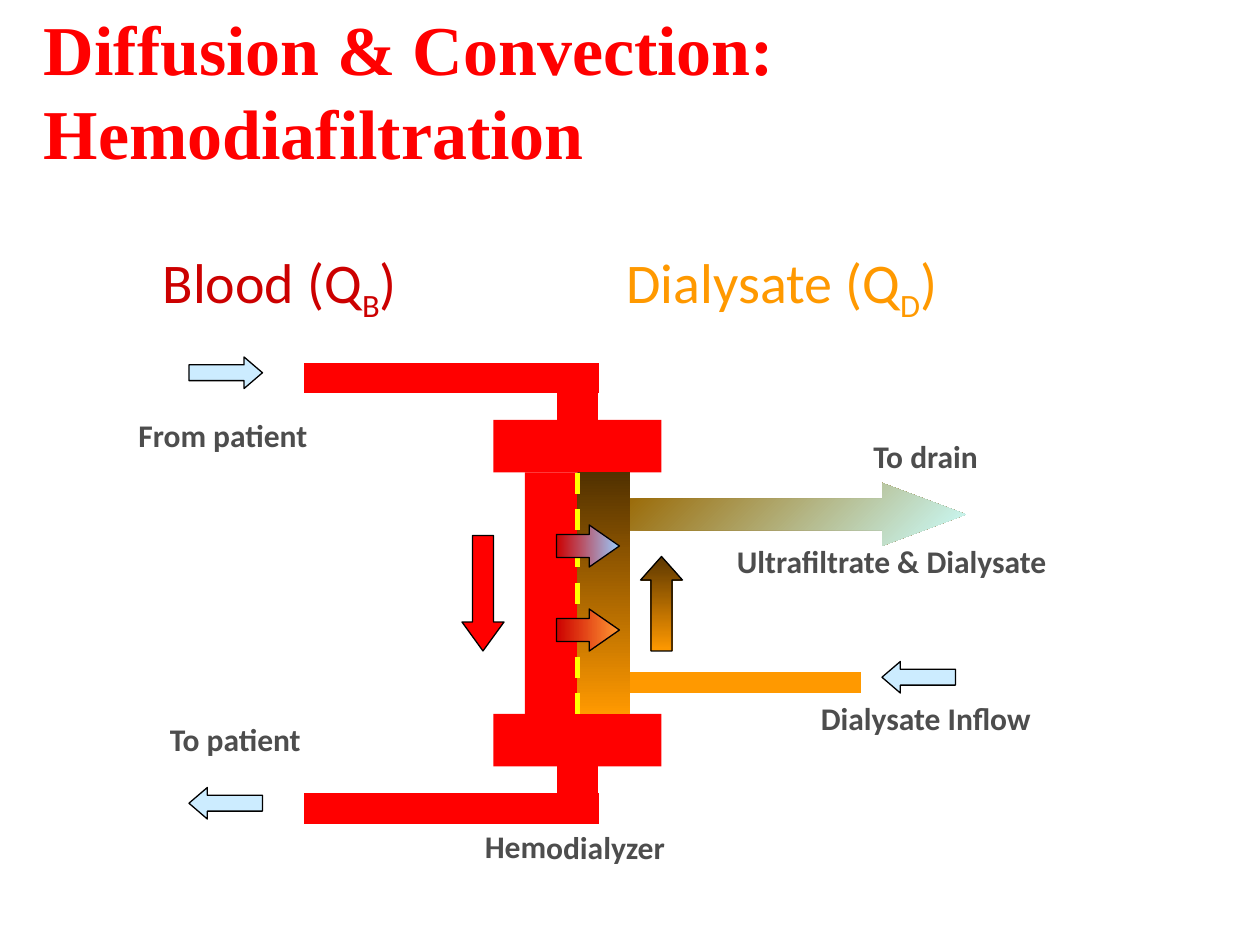
from dataclasses import dataclass
from typing import Optional

from lxml.etree import SubElement
from pptx import Presentation
from pptx.dml.color import RGBColor
from pptx.enum.dml import MSO_LINE
from pptx.enum.shapes import MSO_CONNECTOR, MSO_SHAPE
from pptx.enum.text import MSO_ANCHOR
from pptx.oxml.ns import qn
from pptx.util import Pt

BLACK = RGBColor(0x00, 0x00, 0x00)
RED = RGBColor(0xFF, 0x00, 0x00)
BLOOD = RGBColor(0xCC, 0x00, 0x00)
ORANGE = RGBColor(0xFF, 0x99, 0x00)
YELLOW = RGBColor(0xFF, 0xFF, 0x00)
PALE_BLUE = RGBColor(0xCC, 0xEC, 0xFF)
GREY = RGBColor(0x4D, 0x4D, 0x4D)
DARK_BROWN = RGBColor(0x51, 0x31, 0x00)
BROWN = RGBColor(0x5C, 0x37, 0x00)
OCHRE = RGBColor(0x99, 0x66, 0x00)
PALE_CYAN = RGBColor(0xCC, 0xFF, 0xFF)
SKY = RGBColor(0x99, 0xCC, 0xFF)
LIGHT_ORANGE = RGBColor(0xFF, 0x99, 0x33)

TITLE_FONT = {"name": "Times New Roman", "size": Pt(40), "bold": True}
HEADING_FONT = {"name": "Calibri", "size": Pt(32), "bold": False}
LABEL_FONT = {"name": "Calibri", "size": Pt(18), "bold": True}

RECT = MSO_SHAPE.RECTANGLE
RIGHT = MSO_SHAPE.RIGHT_ARROW
LEFT = MSO_SHAPE.LEFT_ARROW
TOP_SIDE, BOTTOM_SIDE = 0, 2
AXIS = 330


@dataclass
class Block:
    kind: MSO_SHAPE
    box: tuple
    colors: tuple
    angle: float = 0
    adj: tuple = ()
    outlined: bool = False


@dataclass
class Tube:
    start: tuple
    end: tuple
    color: RGBColor
    width: float
    begin_join: Optional[tuple] = None
    end_join: Optional[tuple] = None
    dashed: bool = False


@dataclass
class Label:
    text: str
    left: float
    top: float
    width: float
    rotation: float = 0


def add_block(s, block: Block):
    sp = s.shapes.add_shape(block.kind, *map(Pt, block.box))
    sp.shadow.inherit = False
    for i, value in enumerate(block.adj):
        sp.adjustments[i] = value
    if len(block.colors) == 1:
        sp.fill.solid()
        sp.fill.fore_color.rgb = block.colors[0]
    else:
        sp.fill.gradient()
        sp.fill.gradient_angle = block.angle
        for stop, color in zip(sp.fill.gradient_stops, block.colors):
            stop.color.rgb = color
    if block.outlined:
        sp.line.color.rgb = BLACK
        sp.line.width = Pt(0.75)
    else:
        sp.line.fill.background()
    return sp


def add_tube(s, tube: Tube):
    c = s.shapes.add_connector(MSO_CONNECTOR.STRAIGHT, *map(Pt, tube.start + tube.end))
    if tube.begin_join:
        c.begin_connect(*tube.begin_join)
    if tube.end_join:
        c.end_connect(*tube.end_join)
    c.line.color.rgb = tube.color
    c.line.width = Pt(tube.width)
    if tube.dashed:
        c.line.dash_style = MSO_LINE.DASH
    SubElement(c._element.spPr, qn("a:effectLst"))


def add_text_box(s, box: tuple):
    sp = s.shapes.add_textbox(*map(Pt, box))
    sp.text_frame.word_wrap = True
    return sp


def add_run(p, text: str, font: dict, color: RGBColor, subscript: bool = False) -> None:
    r = p.add_run()
    r.text = text
    for name, value in font.items():
        setattr(r.font, name, value)
    r.font.color.rgb = color
    if subscript:
        r._r.get_or_add_rPr().set("baseline", "-25000")


def add_label(s, label: Label) -> None:
    sp = add_text_box(s, (label.left, label.top, label.width, 29))
    sp.rotation = label.rotation
    add_run(sp.text_frame.paragraphs[0], label.text, LABEL_FONT, GREY)


def add_title(s) -> None:
    tf = add_text_box(s, (18, 6, 654, 90)).text_frame
    tf.vertical_anchor = MSO_ANCHOR.MIDDLE
    add_run(tf.paragraphs[0], "Diffusion & Convection: Hemodiafiltration", TITLE_FONT, RED)


def add_headings(s) -> None:
    tf = add_text_box(s, (36, 138, 648, 344)).text_frame
    tf.margin_left = Pt(57)
    p = tf.paragraphs[0]
    tabs = SubElement(p._p.get_or_add_pPr(), qn("a:tabLst"))
    SubElement(tabs, qn("a:tab"), pos=str(Pt(265)), algn="l")
    for name, letter, color in (("Blood", "B", BLOOD), ("\tDialysate", "D", ORANGE)):
        add_run(p, f"{name} (Q", HEADING_FONT, color)
        add_run(p, letter, HEADING_FONT, color, subscript=True)
        add_run(p, ")", HEADING_FONT, color)


def flow_arrow(kind: MSO_SHAPE, left: float, top: float) -> Block:
    return Block(kind, (left, top, 42, 18), (PALE_BLUE,), adj=(0.5, 0.583), outlined=True)


def transfer_arrow(top: float, color: RGBColor) -> Block:
    return Block(RIGHT, (318, top, 36, 24), (BLOOD, color), adj=(0.548, 0.719), outlined=True)


def main() -> None:
    prs = Presentation()
    prs.slide_width, prs.slide_height = Pt(720), Pt(540)
    s = prs.slides.add_slide(prs.slide_layouts[6])

    add_headings(s)
    add_title(s)

    top_cap, bottom_cap = (
        add_block(s, Block(RECT, (AXIS - 48, top, 96, 30), (RED,))) for top in (240, 408)
    )
    blocks = [
        Block(RECT, (300, 270, 30, 138), (RED,)),
        Block(RECT, (AXIS, 270, 30, 138), (DARK_BROWN, ORANGE), 270),
        Block(RECT, (360, 384, 132, 12), (ORANGE,)),
        flow_arrow(LEFT, 504, 378),
        flow_arrow(RIGHT, 108, 204),
        flow_arrow(LEFT, 108, 450),
        Block(MSO_SHAPE.DOWN_ARROW, (264, 306, 24, 66), (RED,), adj=(0.5, 0.688), outlined=True),
        Block(MSO_SHAPE.UP_ARROW, (366, 318, 24, 54), (BROWN, ORANGE), 270, (0.5, 0.562), True),
        Block(RIGHT, (360, 276, 192, 36), (OCHRE, PALE_CYAN), 315, (0.5, 1.333)),
    ]
    for block in blocks:
        add_block(s, block)

    tubes = [
        Tube((AXIS, 222), (AXIS, 240), RED, 23, end_join=(top_cap, TOP_SIDE)),
        Tube((AXIS, 438), (AXIS, 456), RED, 23, begin_join=(bottom_cap, BOTTOM_SIDE)),
        Tube((174, 216), (342, 216), RED, 17.5),
        Tube((174, 462), (342, 462), RED, 17.5),
        Tube((AXIS, 270), (AXIS, 408), YELLOW, 3,
             (top_cap, BOTTOM_SIDE), (bottom_cap, TOP_SIDE), True),
    ]
    for tube in tubes:
        add_tube(s, tube)

    for top, color in ((300, SKY), (348, LIGHT_ORANGE)):
        add_block(s, transfer_arrow(top, color))

    labels = [
        Label("From patient", 72, 234, 120),
        Label("To patient", 90, 408, 108),
        Label("To drain", 492, 246, 108),
        Label("Dialysate Inflow", 462, 396, 150),
        Label("Hemodialyzer", 270, 469.5, 144, 0.3),
        Label("Ultrafiltrate & Dialysate", 414, 306, 203),
    ]
    for label in labels:
        add_label(s, label)

    prs.save("out.pptx")


if __name__ == "__main__":
    main()
